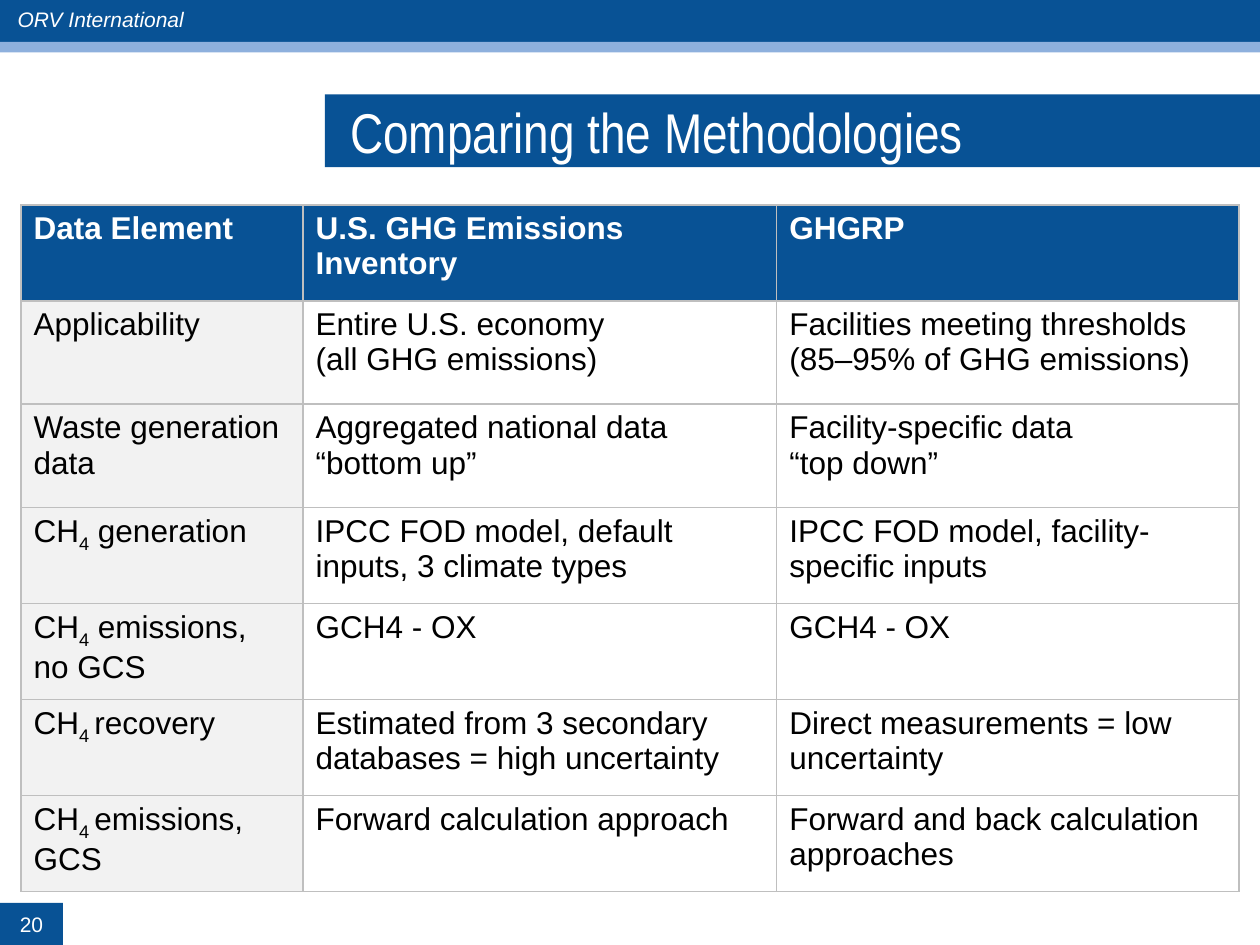
import dataclasses

import lxml.etree
import pptx
import pptx.dml.color
import pptx.enum.shapes
import pptx.enum.text
import pptx.oxml.ns
import pptx.util

Pt = pptx.util.Pt
RGB = pptx.dml.color.RGBColor.from_string
ALIGN = pptx.enum.text.PP_ALIGN
MIDDLE = pptx.enum.text.MSO_ANCHOR.MIDDLE
RECT = pptx.enum.shapes.MSO_SHAPE.RECTANGLE


@dataclasses.dataclass(frozen=True)
class Theme:
    navy: str = "085295"
    sky: str = "8EB0DD"
    white: str = "FFFFFF"
    black: str = "000000"
    pale: str = "F2F2F2"
    rule: str = "BFBFBF"
    font: str = "Arial"
    narrow: str = "Arial Narrow"
    title: int = 32
    body: int = 18
    small: int = 12


THEME = Theme()
COLS = [161.2, 270.7, 264.2]
ROWS = [54.9, 59, 59, 54.9, 54.9, 54.9, 54.9]
SUB = "4", "4 "
CELLS = [
    [["Data Element"], ["U.S. GHG Emissions Inventory"], ["GHGRP"]],
    [["Applicability"],
     ["Entire U.S. economy", "(all GHG emissions)"],
     ["Facilities meeting thresholds (85–95% of GHG emissions)"]],
    [["Waste generation data"],
     ["Aggregated national data", "“bottom up”"],
     ["Facility-specific data", "“top down”"]],
    [[("CH", "4", " generation")],
     ["IPCC FOD model, default inputs, 3 climate types"],
     ["IPCC FOD model, facility-specific inputs"]],
    [[("CH", "4", " emissions, no GCS")], ["GCH4 - OX"], ["GCH4 - OX"]],
    [[("CH", "4 ", "recovery")],
     ["Estimated from 3 secondary databases = high uncertainty"],
     ["Direct measurements = low uncertainty"]],
    [[("CH", "4 ", "emissions, GCS")],
     ["Forward calculation approach"],
     ["Forward and back calculation approaches"]],
]


def write(para, text, size, color, face=THEME.font, bold=False, slant=False):
    run = para.add_run()
    run.text = text
    font = run.font
    font.name, font.size = face, Pt(size)
    font.bold, font.italic = bold, slant
    font.color.rgb = RGB(color)
    return run


def block(slide, box, fill):
    shape = slide.shapes.add_shape(RECT, *map(Pt, box))
    shape.shadow.inherit = False
    shape.fill.solid()
    shape.fill.fore_color.rgb = RGB(fill)
    shape.line.fill.background()
    return shape


def header(slide, box):
    left, top, width, height = box
    band = 24
    block(slide, (left, top, width, band), THEME.navy)
    block(slide, (left, top + band, width, height - band), THEME.sky)
    label = slide.shapes.add_textbox(Pt(left + 3), Pt(top), Pt(130), Pt(22))
    label.text_frame.word_wrap = True
    write(label.text_frame.paragraphs[0], "ORV International",
          THEME.small, THEME.white, slant=True)


def title(slide, box):
    frame = block(slide, box, THEME.navy).text_frame
    frame.word_wrap = True
    frame.vertical_anchor = MIDDLE
    frame.margin_left = frame.margin_right = Pt(14.4)
    frame.margin_top = frame.margin_bottom = Pt(7.2)
    para = frame.paragraphs[0]
    para.alignment = ALIGN.LEFT
    write(para, "Comparing the Methodologies", THEME.title, THEME.white,
          THEME.narrow)


def number(slide, box):
    frame = block(slide, box, THEME.navy).text_frame
    frame.vertical_anchor = MIDDLE
    para = frame.paragraphs[0]
    para.alignment = ALIGN.CENTER
    write(para, "20", THEME.small, THEME.white)


def border(cell):
    qn = pptx.oxml.ns.qn
    props = cell._tc.get_or_add_tcPr()
    for side in "LRTB":
        line = lxml.etree.SubElement(props, qn("a:ln" + side), w=str(Pt(1)))
        fill = lxml.etree.SubElement(line, qn("a:solidFill"))
        lxml.etree.SubElement(fill, qn("a:srgbClr"), val=THEME.rule)


def fill_cell(cell, lines, head, first):
    border(cell)
    cell.fill.solid()
    back = THEME.navy if head else THEME.pale if first else THEME.white
    cell.fill.fore_color.rgb = RGB(back)
    color = THEME.white if head else THEME.black
    frame = cell.text_frame
    for i, line in enumerate(lines):
        para = frame.add_paragraph() if i else frame.paragraphs[0]
        for part in (line,) if isinstance(line, str) else line:
            run = write(para, part, THEME.body, color, bold=head)
            if part in SUB:
                run._r.get_or_add_rPr().set("baseline", "-25000")


def matrix(slide, box):
    table = slide.shapes.add_table(len(ROWS), len(COLS), *map(Pt, box)).table
    table.horz_banding = False
    for col, width in zip(table.columns, COLS):
        col.width = Pt(width)
    for row, height in zip(table.rows, ROWS):
        row.height = Pt(height)
    for r, row in enumerate(CELLS):
        for c, lines in enumerate(row):
            fill_cell(table.cell(r, c), lines, r == 0, c == 0)


def main():
    deck = pptx.Presentation()
    deck.slide_width, deck.slide_height = Pt(720), Pt(540)
    slide = deck.slides.add_slide(deck.slide_layouts[6])
    header(slide, (0, 0, 720, 30))
    title(slide, (185.7, 54, 534.3, 41.5))
    number(slide, (0, 516, 36, 24))
    matrix(slide, (12, 117, sum(COLS), sum(ROWS)))
    deck.save("out.pptx")


if __name__ == "__main__":
    main()
